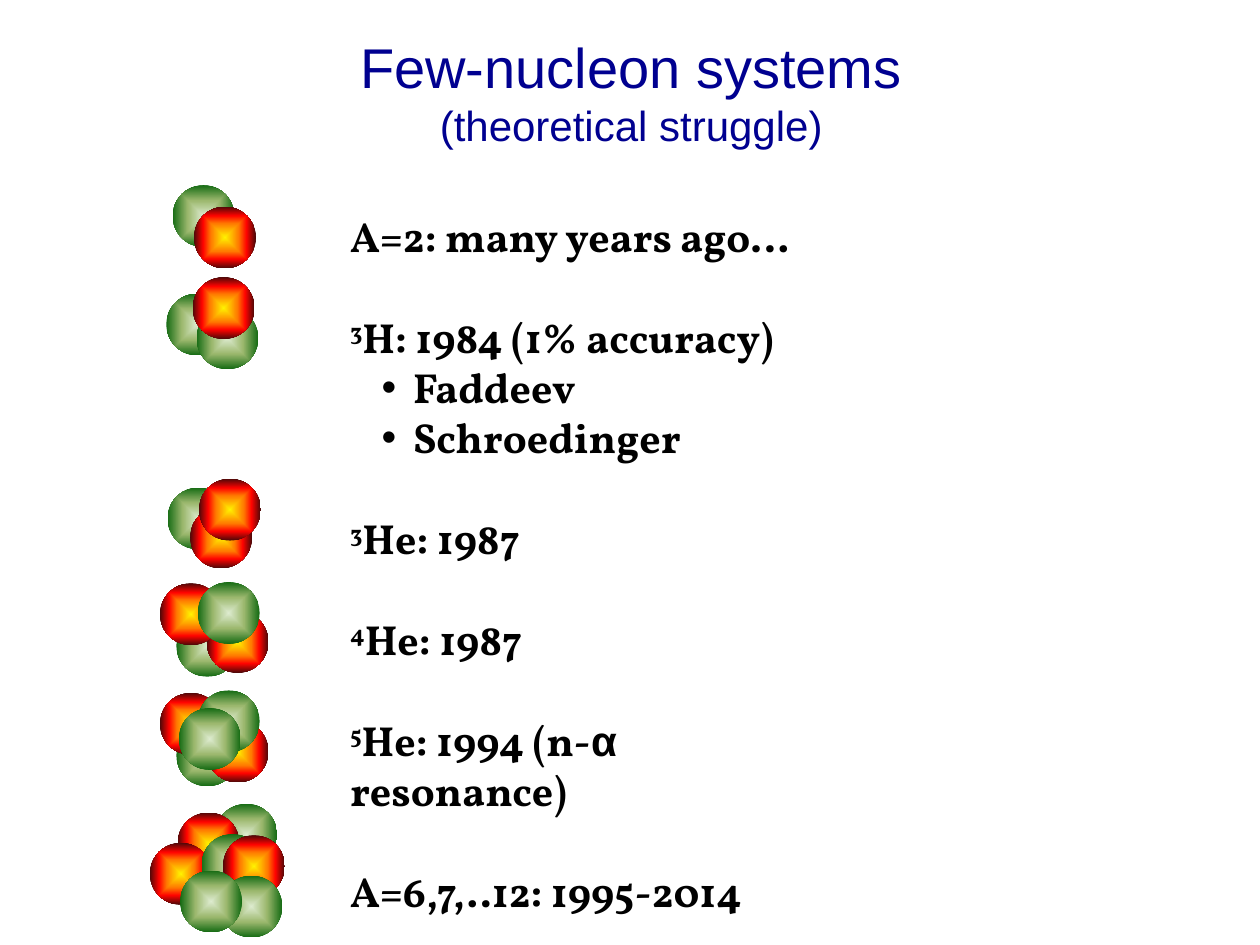
from dataclasses import dataclass

from lxml.etree import SubElement
from pptx import Presentation
from pptx.dml.color import RGBColor
from pptx.enum.shapes import MSO_SHAPE
from pptx.enum.text import MSO_AUTO_SIZE, PP_ALIGN
from pptx.oxml.ns import qn
from pptx.util import Pt

PX = 9144  # EMU per px, 100 px to the inch
NUCLEON_SIZE = 49
LINE_GAP = Pt(28.8)
BODY_FONT, TITLE_FONT = "Vollkorn", "Arial"

# Gradient stops from the centre outwards: percent, colour
GRADIENTS = {
    "n": [(0, "DDEBCF"), (50, "9CB86E"), (100, "156B13")],
    "p": [(0, "FFF200"), (45, "FF7A00"), (70, "FF0300"), (100, "4D0808")],
}


@dataclass
class Nucleon:
    kind: str  # "n" neutron, "p" proton
    x: int
    y: int


@dataclass
class Milestone:
    text: str
    mass: str = ""
    bullet: bool = False


@dataclass
class TitleLine:
    text: str
    size: int


NUCLEI = [
    [Nucleon("n", 137, 147), Nucleon("p", 154, 164)],
    [Nucleon("n", 132, 233), Nucleon("n", 156, 244), Nucleon("p", 153, 220)],
    [Nucleon("n", 133, 387), Nucleon("p", 151, 402), Nucleon("p", 158, 380)],
    [Nucleon("n", 140, 488), Nucleon("p", 164, 485), Nucleon("p", 127, 463),
     Nucleon("n", 157, 462)],
    [Nucleon("n", 140, 575), Nucleon("p", 164, 572), Nucleon("p", 127, 550),
     Nucleon("n", 157, 548), Nucleon("n", 142, 562)],
]
LARGE_NUCLEUS = [
    Nucleon("n", 171, 638), Nucleon("p", 141, 645), Nucleon("p", 119, 669),
    Nucleon("n", 160, 662), Nucleon("p", 177, 663), Nucleon("n", 175, 695),
    Nucleon("n", 143, 691),
]
MILESTONES = [
    Milestone("A=2: many years ago…"),
    Milestone("H: 1984 (1% accuracy)", mass="3"),
    Milestone("Faddeev", bullet=True),
    Milestone("Schroedinger", bullet=True),
    Milestone("He: 1987", mass="3"),
    Milestone("He: 1987", mass="4"),
    Milestone("He: 1994 (n-α resonance)", mass="5"),
    Milestone("A=6,7,..12: 1995-2014"),
]
TITLE = [TitleLine("Few-nucleon systems", 32), TitleLine("(theoretical struggle)", 24)]


def px(length: int) -> int:
    return length * PX


def color(value: str) -> RGBColor:
    return RGBColor.from_string(value)


def format_run(run, font: str, size: int, ink: str, bold: bool = False) -> None:
    run.font.name = font
    run.font.size = Pt(size)
    run.font.bold = bold
    run.font.color.rgb = color(ink)


def add_text_frame(slide, x: int, y: int, width: int, height: int):
    frame = slide.shapes.add_textbox(px(x), px(y), px(width), px(height)).text_frame
    frame.word_wrap = True
    frame.auto_size = MSO_AUTO_SIZE.SHAPE_TO_FIT_TEXT
    return frame


def draw_nucleon(shapes, nucleon: Nucleon) -> None:
    ball = shapes.add_shape(MSO_SHAPE.OVAL, px(nucleon.x), px(nucleon.y),
                            px(NUCLEON_SIZE), px(NUCLEON_SIZE))
    ball.shadow.inherit = False
    ball.line.fill.background()
    ball.fill.gradient()
    gradient = ball.element.spPr.find(qn("a:gradFill"))
    for child in list(gradient):
        gradient.remove(child)
    stops = SubElement(gradient, qn("a:gsLst"))
    for percent, tint in GRADIENTS[nucleon.kind]:
        stop = SubElement(stops, qn("a:gs"), pos=str(percent * 1000))
        SubElement(stop, qn("a:srgbClr"), val=tint)
    shading = SubElement(gradient, qn("a:path"), path="shape")
    SubElement(shading, qn("a:fillToRect"),
               {side: "50000" for side in ("l", "t", "r", "b")})


def add_bullet(paragraph) -> None:
    paragraph.level = 1
    properties = paragraph._p.get_or_add_pPr()
    properties.set("marL", str(px(50)))
    properties.set("indent", str(px(-25)))
    SubElement(properties, qn("a:buFont"), typeface="Arial")
    SubElement(properties, qn("a:buChar"), char="•")


def write_milestone(paragraph, milestone: Milestone) -> None:
    if milestone.bullet:
        add_bullet(paragraph)
    before, alpha, after = milestone.text.partition("α")
    for part in (milestone.mass, before, alpha, after):
        if not part:
            continue
        run = paragraph.add_run()
        run.text = part
        format_run(run, TITLE_FONT if part == "α" else BODY_FONT, 24, "000000", True)
        if part == milestone.mass:
            run._r.get_or_add_rPr().set("baseline", "30000")


def main() -> None:
    presentation = Presentation()
    presentation.slide_width, presentation.slide_height = px(1000), px(750)
    slide = presentation.slides.add_slide(presentation.slide_layouts[6])

    # Milestones
    history = add_text_frame(slide, 268, 162, 406, 535)
    for index, milestone in enumerate(MILESTONES):
        paragraph = history.add_paragraph() if index else history.paragraphs[0]
        if index and not milestone.bullet:
            paragraph.space_before = LINE_GAP
        write_milestone(paragraph, milestone)

    # Nuclei
    for nucleus in NUCLEI:
        group = slide.shapes.add_group_shape()
        for nucleon in nucleus:
            draw_nucleon(group.shapes, nucleon)
    for nucleon in LARGE_NUCLEUS:
        draw_nucleon(slide.shapes, nucleon)

    # Title
    heading = add_text_frame(slide, 274, 21, 454, 104)
    heading.text = "\n".join(line.text for line in TITLE)
    for paragraph, line in zip(heading.paragraphs, TITLE):
        paragraph.alignment = PP_ALIGN.CENTER
        format_run(paragraph.runs[0], TITLE_FONT, line.size, "000090")

    presentation.save("out.pptx")


if __name__ == "__main__":
    main()
